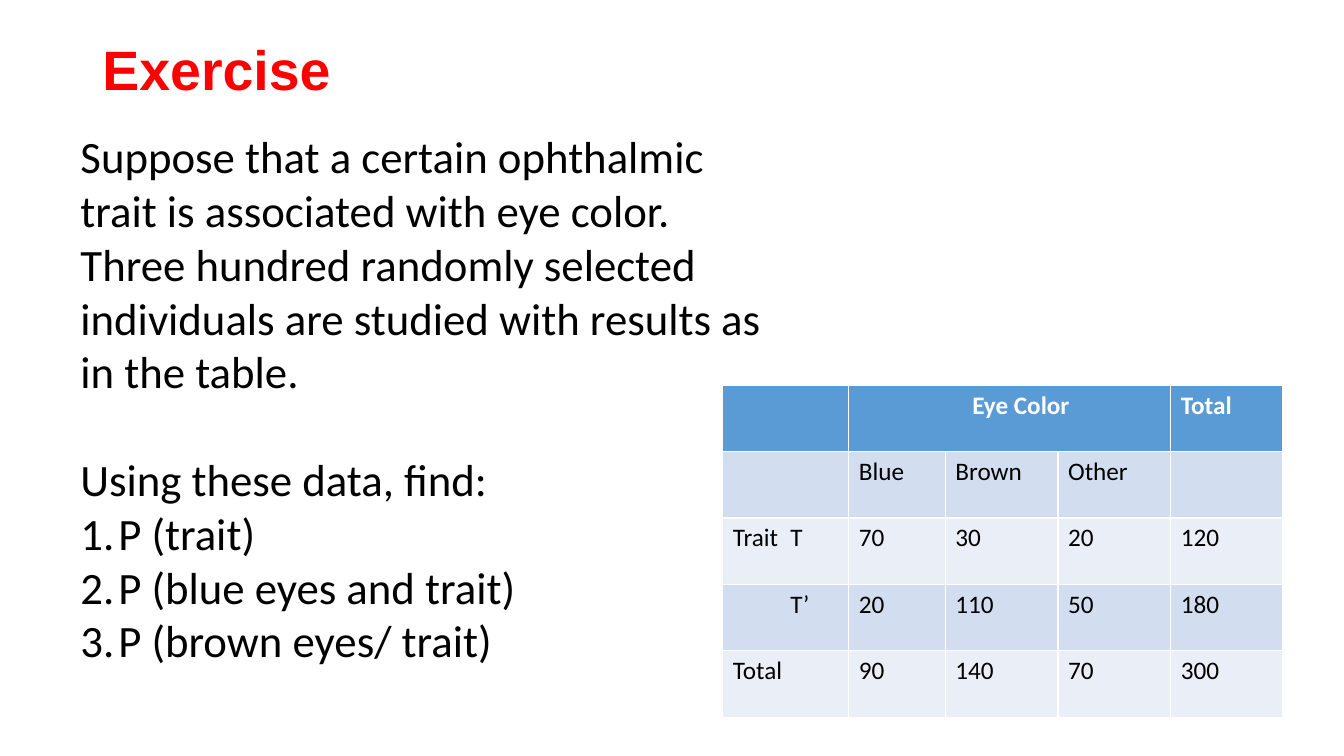
from dataclasses import dataclass

from lxml import etree
from pptx import Presentation
from pptx.dml.color import RGBColor as RGB
from pptx.enum.text import MSO_ANCHOR as ANCHOR, MSO_AUTO_SIZE as AUTO, PP_ALIGN as ALIGN
from pptx.oxml.ns import qn
from pptx.util import Pt


@dataclass(frozen=True)
class Theme:
    red: str = "FF0000"
    black: str = "000000"
    white: str = "FFFFFF"
    header: str = "5B9BD5"
    bands: tuple = ("EAEFF7", "D2DEEF")
    heading: str = "Arial"
    body: str = "Calibri"
    title_size: float = 39.6
    body_size: float = 32
    table_size: float = 18


T = Theme()


def write(p, text, size=T.body_size, font=T.body, color=T.black, bold=False, indent=0, hanging=0):
    p.alignment = ALIGN.LEFT
    if indent:
        pPr = p._p.get_or_add_pPr()
        pPr.set("marL", str(Pt(indent)))
        pPr.set("indent", str(Pt(-hanging)))
    r = p.add_run()
    r.text = text
    r.font.size, r.font.name, r.font.bold = Pt(size), font, bold
    r.font.color.rgb = RGB.from_string(color)


prs = Presentation()
prs.slide_width, prs.slide_height = Pt(960), Pt(540)
s = prs.slides.add_slide(prs.slide_layouts[5])

# Title
title = s.shapes.title
title.left, title.top, title.width, title.height = Pt(66), Pt(28.8), Pt(828), Pt(45.4)
tf = title.text_frame
tf.auto_size, tf.vertical_anchor = AUTO.NONE, ANCHOR.MIDDLE
p = tf.paragraphs[0]
p.line_spacing = 0.9
write(p, "Exercise", size=T.title_size, font=T.heading, color=T.red, bold=True)

# Table of eye colour against trait
rows = [
    ["", "Eye Color", "", "", "Total"],
    ["", "Blue", "Brown", "Other", ""],
    ["Trait\tT", "70", "30", "20", "120"],
    ["T’", "20", "110", "50", "180"],
    ["Total", "90", "140", "70", "300"],
]
widths = [90, 69, 80.5, 80.5, 80]
row_height = 47.5
trait_indent = 41
indents = {"Eye Color": 81, "T’": trait_indent}
table = s.shapes.add_table(len(rows), len(widths), Pt(516.3), Pt(275),
                           Pt(sum(widths)), Pt(row_height * len(rows))).table
for column, width in zip(table.columns, widths):
    column.width = Pt(width)
table.cell(0, 1).merge(table.cell(0, 3))
for i, row in enumerate(rows):
    table.rows[i].height = Pt(row_height)
    for j, text in enumerate(row):
        cell = table.cell(i, j)
        cell.fill.solid()
        cell.fill.fore_color.rgb = RGB.from_string(T.bands[i % 2] if i else T.header)
        if not text:
            continue
        p = cell.text_frame.paragraphs[0]
        write(p, text, size=T.table_size, color=T.black if i else T.white,
              bold=i == 0, indent=indents.get(text, 0))
        if "\t" in text:
            tabs = etree.SubElement(p._p.get_or_add_pPr(), qn("a:tabLst"))
            etree.SubElement(tabs, qn("a:tab"), pos=str(Pt(trait_indent)), algn="l")

# Problem statement and numbered questions
tf = s.shapes.add_textbox(Pt(50.4), Pt(88.6), Pt(508.3), Pt(395.3)).text_frame
tf.word_wrap, tf.auto_size = True, AUTO.SHAPE_TO_FIT_TEXT
write(tf.paragraphs[0], "Suppose that a certain ophthalmic trait is associated with eye color. "
      "Three hundred randomly selected individuals are studied with results as in the table.")
p = tf.add_paragraph()
p.space_before = Pt(38.4)
write(p, "Using these data, find:")
for question in ["P (trait)", "P (blue eyes and trait)", "P (brown eyes/ trait)"]:
    p = tf.add_paragraph()
    write(p, question, indent=27, hanging=27)
    etree.SubElement(p._p.get_or_add_pPr(), qn("a:buAutoNum"), type="arabicPeriod")

prs.save("out.pptx")
